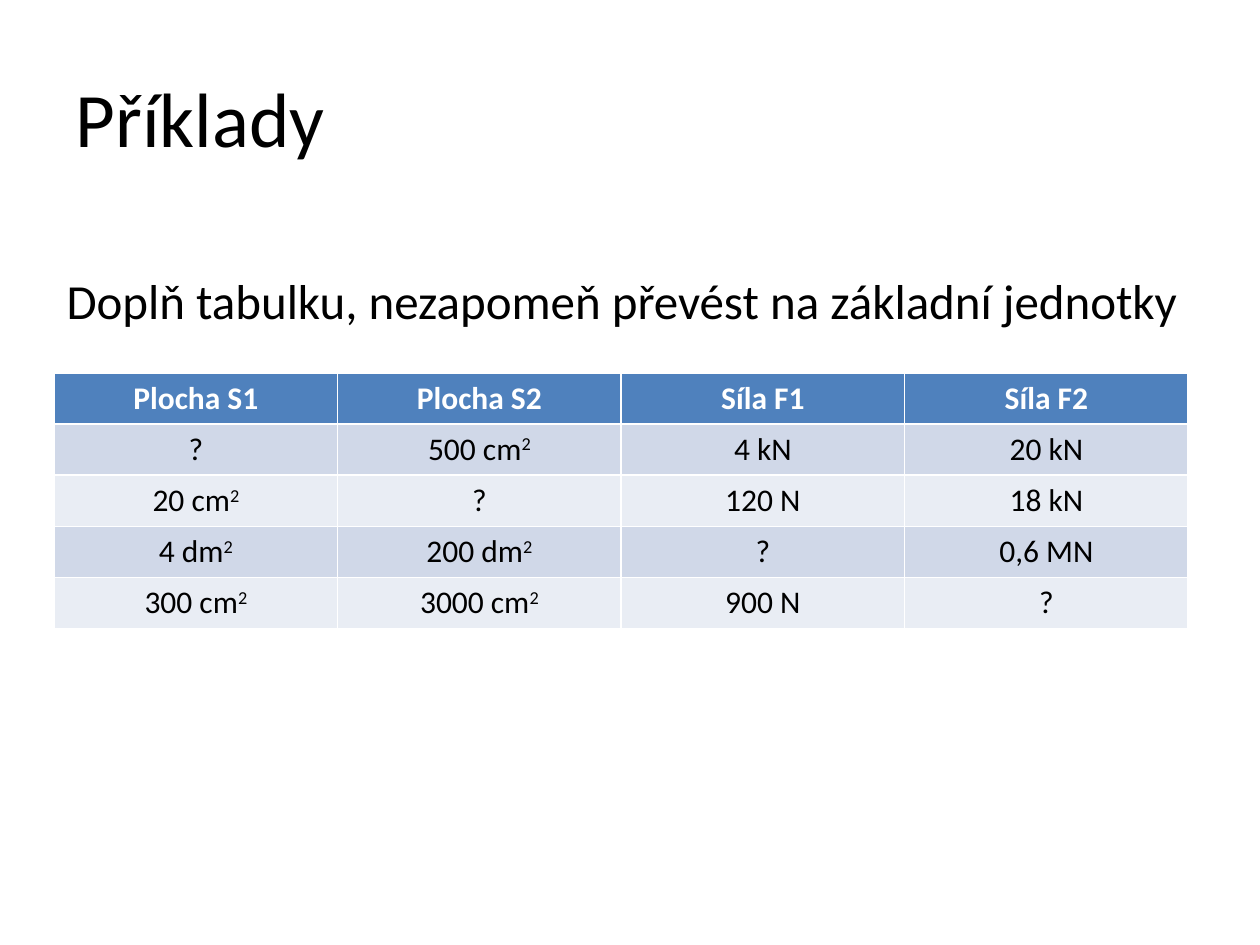
from pptx import Presentation
from pptx.dml.color import RGBColor
from pptx.enum.text import MSO_ANCHOR as Anchor, MSO_AUTO_SIZE as AutoSize, PP_ALIGN as Align
from pptx.util import Inches, Pt

HEADER = ["Plocha S1", "Plocha S2", "Síla F1", "Síla F2"]
# A caret marks the start of a superscript.
EXERCISES = [
    ["?", "500 cm^2", "4 kN", "20 kN"],
    ["20 cm^2", "?", "120 N", "18 kN"],
    ["4 dm^2", "200 dm^2", "?", "0,6 MN"],
    ["300 cm^2", "3000 cm^2", "900 N", "?"],
]


def color(hex_string):
    return RGBColor.from_string(hex_string)


class SlideBuilder:
    font = "Calibri"
    ink = "000000"
    header_ink = "FFFFFF"
    header_fill = "4F81BD"
    band_fills = ["D0D8E8", "E9EDF4"]

    def __init__(self, page):
        self.page = page

    def format_spans(self, para, size, ink, bold=False):
        for span in para.runs:
            span.font.name = self.font
            span.font.size = Pt(size)
            span.font.bold = bold
            span.font.color.rgb = color(ink)

    def title(self, text, left, top, width, height):
        box = self.page.shapes.title
        box.left, box.top = Inches(left), Inches(top)
        box.width, box.height = Inches(width), Inches(height)
        frame = box.text_frame
        frame.text = text
        frame.vertical_anchor = Anchor.MIDDLE
        frame.paragraphs[0].alignment = Align.LEFT
        self.format_spans(frame.paragraphs[0], 44, self.ink)

    def text_line(self, text, left, top, width, height):
        box = self.page.shapes.add_textbox(
            Inches(left), Inches(top), Inches(width), Inches(height))
        frame = box.text_frame
        frame.text = text
        frame.word_wrap = False
        frame.auto_size = AutoSize.SHAPE_TO_FIT_TEXT
        self.format_spans(frame.paragraphs[0], 28, self.ink)

    def fill_cell(self, cell, text, fill, ink, bold):
        cell.fill.solid()
        cell.fill.fore_color.rgb = color(fill)
        base, _, exponent = text.partition("^")
        cell.text_frame.text = base
        para = cell.text_frame.paragraphs[0]
        para.alignment = Align.CENTER
        if exponent:
            span = para.add_run()
            span.text = exponent
            span.font._element.set("baseline", "30000")
        self.format_spans(para, 18, ink, bold)

    def table(self, header, body, left, top, width, height):
        """Relies on the default table style for the white cell borders."""
        rows = [header] + body
        table = self.page.shapes.add_table(
            len(rows), len(header),
            Inches(left), Inches(top), Inches(width), Inches(height)).table
        for row, texts in enumerate(rows):
            is_header = row == 0
            fill = self.header_fill if is_header else self.band_fills[(row - 1) % 2]
            ink = self.header_ink if is_header else self.ink
            for column, text in enumerate(texts):
                self.fill_cell(table.cell(row, column), text, fill, ink, is_header)


def main():
    deck = Presentation()
    deck.slide_width, deck.slide_height = Inches(10), Inches(7.5)
    title_only = deck.slide_layouts[5]
    builder = SlideBuilder(deck.slides.add_slide(title_only))
    builder.title("Příklady", 0.5, 0.3, 9, 1.25)
    builder.table(HEADER, EXERCISES, 0.43, 2.96, 9, 2.03)
    builder.text_line("Doplň tabulku, nezapomeň převést na základní jednotky",
                      0.43, 2.1, 9.11, 0.57)
    deck.save("out.pptx")


if __name__ == "__main__":
    main()
